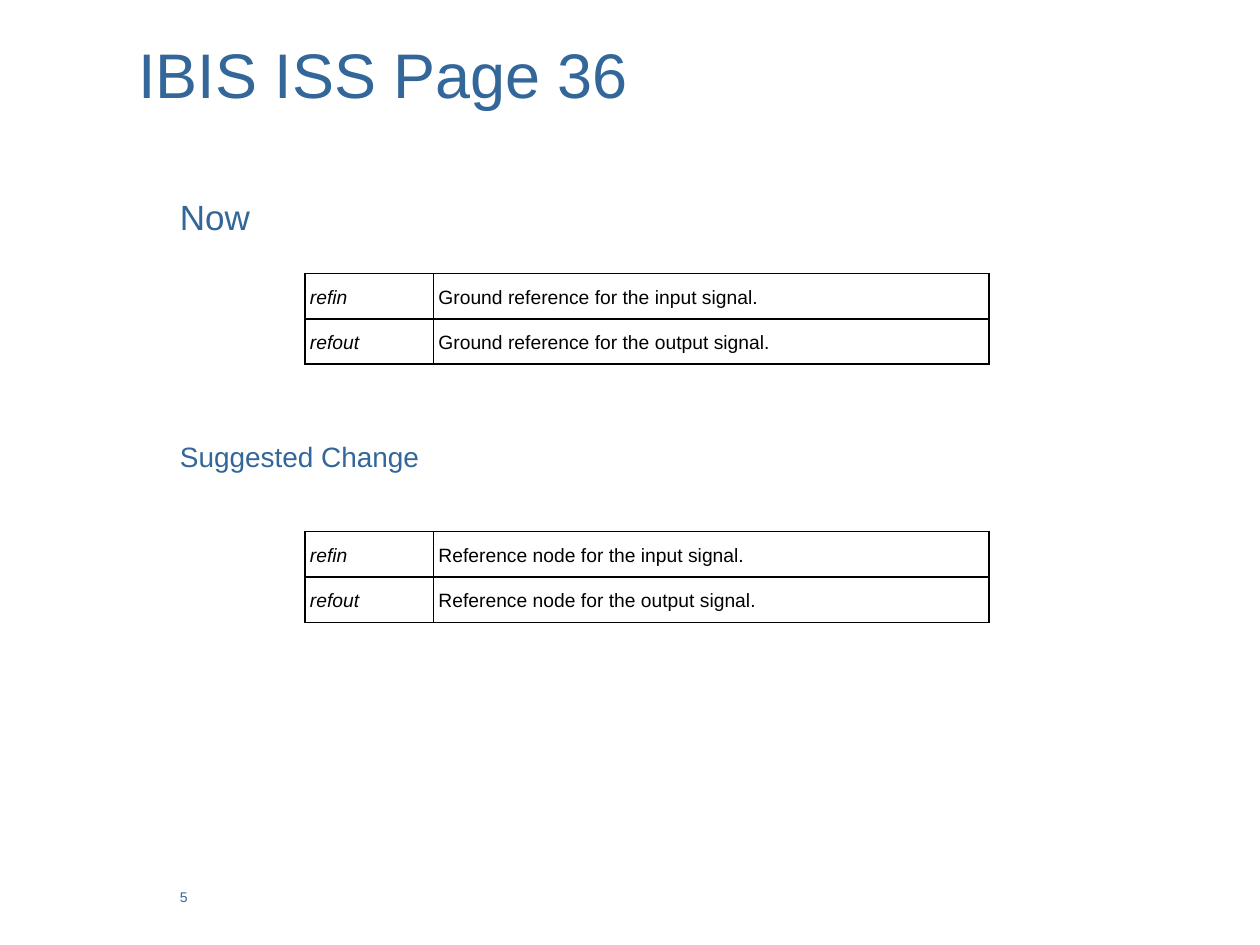
from pptx import Presentation
from pptx.dml.color import RGBColor
from pptx.enum.text import MSO_ANCHOR as Anchor, MSO_AUTO_SIZE as AutoSize
from pptx.oxml import parse_xml
from pptx.oxml.ns import nsdecls
from pptx.util import Inches, Pt

BLUE = RGBColor(0x33, 0x66, 0x99)
BLACK = RGBColor(0, 0, 0)


class Deck:
    """Holds the style and the current slide, with one method per element."""

    font = "Arial"
    col_widths = (1.02, 4.41)
    row_height = 0.36
    cell_format = {
        "margin_left": Inches(0.04),
        "margin_top": Inches(0.11),
        "margin_right": Inches(0.04),
        "margin_bottom": Inches(0.08),
    }
    para_format = {"line_spacing": Pt(12), "space_after": Pt(4)}

    def __init__(self, prs):
        self.s = prs.slides.add_slide(prs.slide_layouts[6])

    def run(self, p, text, size, color, italic=False):
        r = p.add_run()
        r.text = text
        r.font.color.rgb = color
        values = {"name": self.font, "size": Pt(size), "italic": italic}
        for key, value in values.items():
            setattr(r.font, key, value)

    def text(self, text, box, size, **frame_format):
        tf = self.s.shapes.add_textbox(*map(Inches, box)).text_frame
        for key, value in {"word_wrap": True, **frame_format}.items():
            setattr(tf, key, value)
        self.run(tf.paragraphs[0], text, size, BLUE)

    def label(self, text, box, size):
        self.text(text, box, size, word_wrap=False, auto_size=AutoSize.SHAPE_TO_FIT_TEXT)

    def borders(self, cell):
        tc_pr = cell._tc.get_or_add_tcPr()
        for i, side in enumerate(("lnL", "lnR", "lnT", "lnB")):
            tc_pr.insert(i, parse_xml(
                f'<a:{side} {nsdecls("a")} w="{Pt(1)}"><a:solidFill>'
                f'<a:srgbClr val="{BLACK}"/></a:solidFill></a:{side}>'))

    def table(self, rows, left, top):
        size = (sum(self.col_widths), self.row_height * len(rows))
        table = self.s.shapes.add_table(
            len(rows), len(self.col_widths), *map(Inches, (left, top, *size))).table
        table.first_row = table.horz_banding = False
        for col, width in zip(table.columns, self.col_widths):
            col.width = Inches(width)
        for i, row in enumerate(rows):
            table.rows[i].height = Inches(self.row_height)
            for j, text in enumerate(row):
                self.cell(table.cell(i, j), text, italic=j == 0)

    def cell(self, cell, text, italic):
        cell.fill.background()
        self.borders(cell)
        for key, value in self.cell_format.items():
            setattr(cell, key, value)
        p = cell.text_frame.paragraphs[0]
        for key, value in self.para_format.items():
            setattr(p, key, value)
        self.run(p, text, 11, BLACK, italic)


def main():
    prs = Presentation()
    prs.slide_width, prs.slide_height = Inches(10), Inches(7.5)
    deck = Deck(prs)
    deck.text("IBIS ISS Page 36", (1, 0.17, 7.67, 0.83), 36, vertical_anchor=Anchor.MIDDLE)
    deck.text("5", (1.33, 7, 5.17, 0.35), 8)
    for reference, top in (("Ground reference", 2.17), ("Reference node", 4.22)):
        rows = [(f"ref{end}", f"{reference} for the {end}put signal.") for end in ("in", "out")]
        deck.table(rows, 2.42, top)
    deck.label("Now", (1.33, 1.5, 0.76, 0.44), 20)
    deck.label("Suggested Change", (1.33, 3.44, 2.12, 0.37), 16)
    prs.save("out.pptx")


if __name__ == "__main__":
    main()
